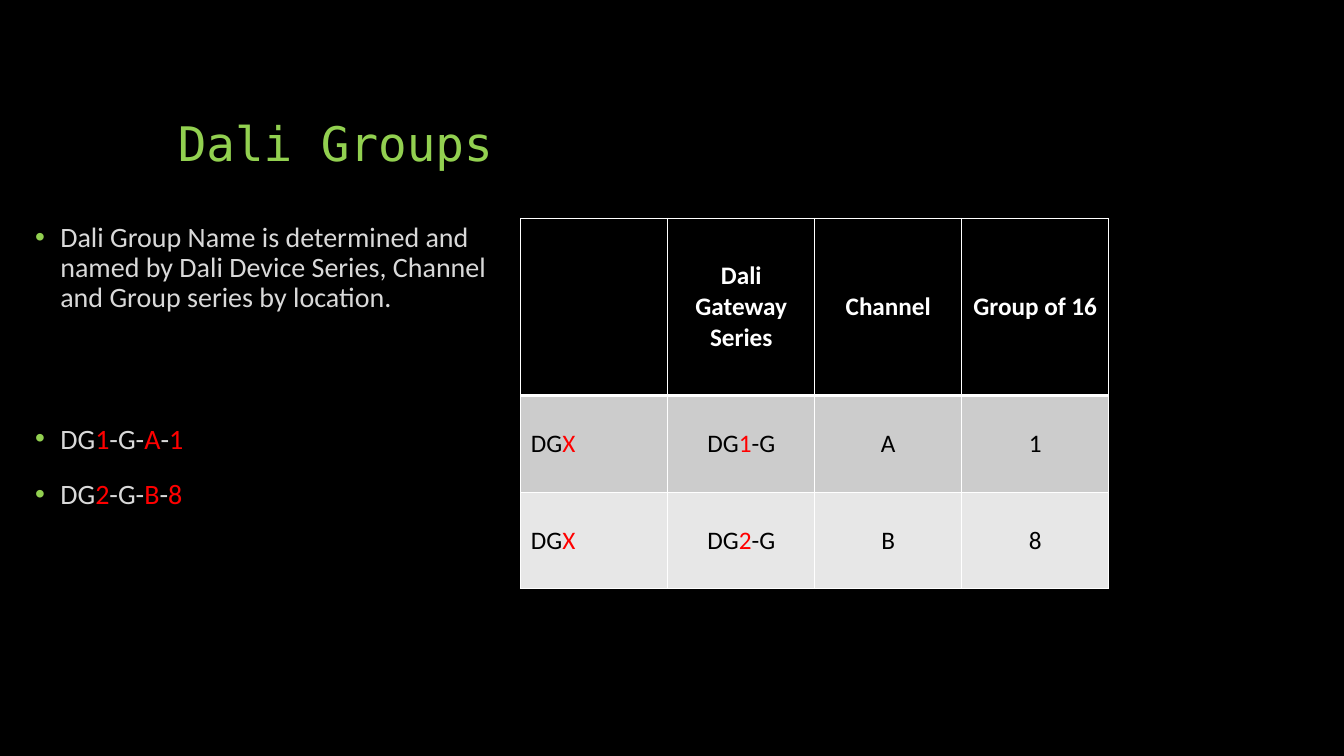
import pptx
import pptx.dml.color
import pptx.enum.text
import pptx.oxml
import pptx.oxml.ns
import pptx.util

ALIGN = pptx.enum.text.PP_ALIGN
ANCHOR = pptx.enum.text.MSO_ANCHOR
GREEN, RED, GREY, WHITE, BLACK = "92D050", "FF0000", "D9D9D9", "FFFFFF", "000000"


def color(value):
    return pptx.dml.color.RGBColor.from_string(value)


def element(markup):
    return pptx.oxml.parse_xml(markup.replace(" ", f" {pptx.oxml.ns.nsdecls('a')} ", 1))


class GroupSlide:
    """Draws on a 160 by 90 grid; text between bars takes the accent colour."""

    columns, rows = 160, 90
    body_font, title_font = "Calibri", "DejaVu Sans Mono"

    def __init__(self, presentation):
        self.presentation = presentation
        self.slide = presentation.slides.add_slide(presentation.slide_layouts[6])
        self.slide.background.fill.solid()
        self.slide.background.fill.fore_color.rgb = color(BLACK)

    def across(self, columns):
        return round(self.presentation.slide_width * columns / self.columns)

    def down(self, rows):
        return round(self.presentation.slide_height * rows / self.rows)

    def area(self, left, top, width, height):
        return self.across(left), self.down(top), self.across(width), self.down(height)

    def add_runs(self, paragraph, text, size, ink, font=body_font, bold=False):
        for index, piece in enumerate(text.split("|")):
            run = paragraph.add_run()
            run.text = piece
            run.font.name = font
            run.font.size = pptx.util.Pt(size)
            run.font.bold = bold
            run.font.color.rgb = color(RED if index % 2 else ink)

    def text_frame(self, *area):
        frame = self.slide.shapes.add_textbox(*self.area(*area)).text_frame
        frame.word_wrap = True
        return frame

    def title(self, text, *area):
        frame = self.text_frame(*area)
        frame.vertical_anchor = ANCHOR.BOTTOM
        frame.paragraphs[0].line_spacing = 0.9
        self.add_runs(frame.paragraphs[0], text, 34, GREEN, self.title_font)

    def bullets(self, lines, *area):
        frame = self.text_frame(*area)
        for index, line in enumerate(lines):
            paragraph = frame.add_paragraph() if index else frame.paragraphs[0]
            properties = paragraph._p.get_or_add_pPr()
            indent = pptx.util.Inches(0.25)
            properties.set("marL", str(indent))
            properties.set("indent", str(-indent))
            properties.append(element(f'<a:buClr ><a:srgbClr val="{GREEN}"/></a:buClr>'))
            properties.append(element('<a:buFont typeface="Arial"/>'))
            properties.append(element('<a:buChar char="•"/>'))
            paragraph.line_spacing = 0.9
            if index:
                paragraph.space_before = pptx.util.Pt(18)
            self.add_runs(paragraph, line, 20, GREY)

    def border(self, cell, side, points):
        cell._tc.get_or_add_tcPr().append(element(
            f'<a:ln{side} w="{pptx.util.Pt(points)}"><a:solidFill>'
            f'<a:srgbClr val="{WHITE}"/></a:solidFill></a:ln{side}>'))

    def table(self, records, heights, fills, *area):
        table = self.slide.shapes.add_table(
            len(records), len(records[0]), *self.area(*area)).table
        for column in table.columns:
            column.width = self.across(area[2] / len(records[0]))
        for row_index, record in enumerate(records):
            table.rows[row_index].height = self.down(heights[row_index])
            for column_index, text in enumerate(record):
                cell = table.cell(row_index, column_index)
                header = row_index == 0
                widths = {"L": 1, "R": 1, "T": 3 if row_index == 1 else 1, "B": 3 if header else 1}
                for side, points in widths.items():
                    self.border(cell, side, points)
                cell.fill.solid()
                cell.fill.fore_color.rgb = color(fills[row_index])
                cell.vertical_anchor = ANCHOR.MIDDLE
                paragraph = cell.text_frame.paragraphs[0]
                paragraph.alignment = ALIGN.CENTER if header or column_index else ALIGN.LEFT
                if text:
                    self.add_runs(paragraph, text, 18, WHITE if header else BLACK, bold=header)


def main():
    presentation = pptx.Presentation()
    presentation.slide_width = pptx.util.Inches(13.33)
    presentation.slide_height = pptx.util.Inches(7.5)
    page = GroupSlide(presentation)
    page.title("Dali Groups", 20, 6, 120, 15)
    page.bullets(["Dali Group Name is determined and named by Dali Device Series, "
                  "Channel and Group series by location."], 3, 26, 57, 25)
    page.table([["", "Dali Gateway Series", "Channel", "Group of 16"],
                ["DG|X", "DG|1|-G", "A", "1"],
                ["DG|X", "DG|2|-G", "B", "8"]],
               [21.1, 11.5, 11.5], [BLACK, "CCCCCC", "E7E7E7"], 62, 26, 70, 44.1)
    page.bullets(["DG|1|-G-|A|-|1", "DG|2|-G-|B|-|8"], 3, 50, 57, 25)
    presentation.save("out.pptx")


if __name__ == "__main__":
    main()
